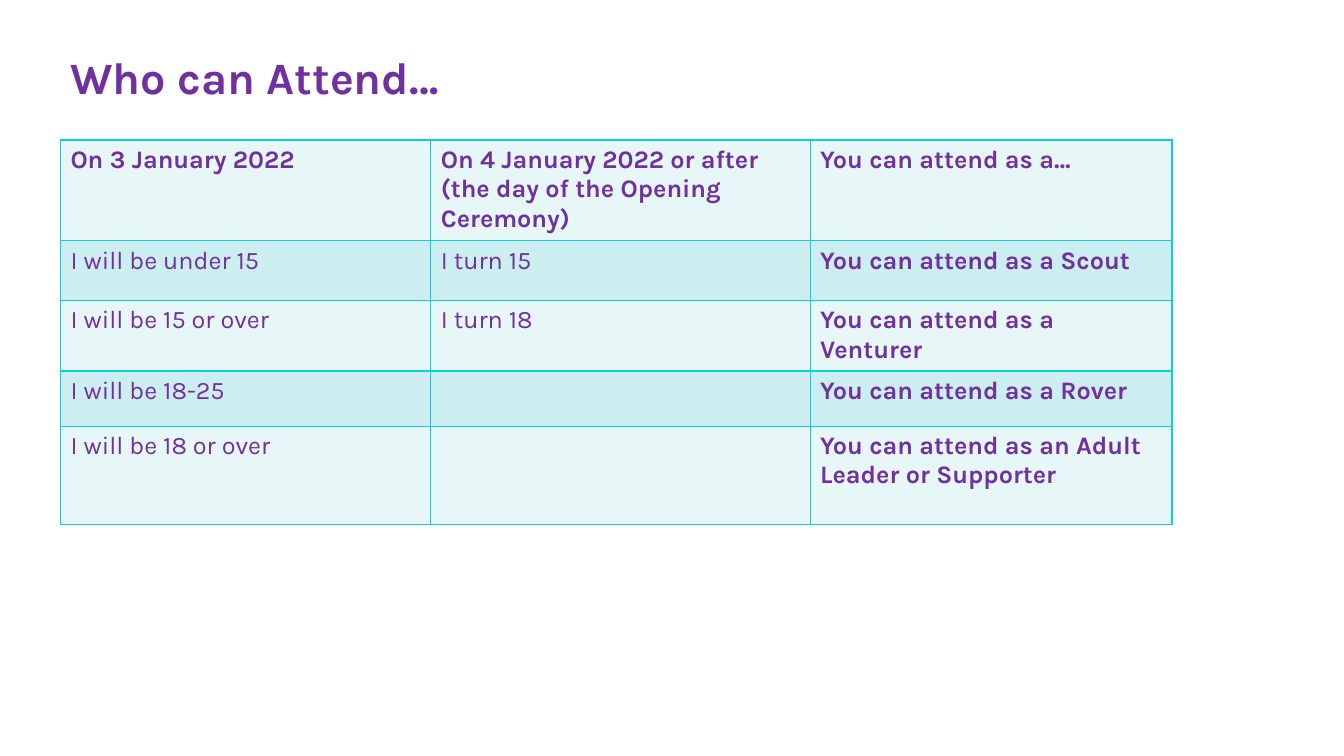
from pptx import Presentation
from pptx.dml.color import RGBColor
from pptx.enum.text import MSO_ANCHOR, MSO_AUTO_SIZE, PP_ALIGN
from pptx.oxml import parse_xml
from pptx.oxml.ns import nsdecls
from pptx.util import Pt

# Content
TITLE = "Who can Attend…"
ROWS = [
    ("On 3 January 2022",
     "On 4 January 2022 or after\n(the day of the Opening Ceremony)",
     "You can attend as a…"),
    ("I will be under 15", "I turn 15", "You can attend as a Scout"),
    ("I will be 15 or over", "I turn 18", "You can attend as a Venturer"),
    ("I will be 18-25", "", "You can attend as a Rover"),
    ("I will be 18 or over", "", "You can attend as an Adult Leader or Supporter"),
]

# Format, with lengths in points
PURPLE = RGBColor(0x70, 0x30, 0xA0)
PALE = RGBColor(0xE7, 0xF7, 0xF8)
AQUA = RGBColor(0xCC, 0xEE, 0xF1)
BORDER = RGBColor(0x0B, 0xD0, 0xD9)
LEFT = 43.2
TABLE_TOP = 100
COLUMN_WIDTHS = [264.5, 271, 258.5]
ROW_HEIGHTS = [70, 42.5, 44, 39.5, 70]


def format_font(font, size, bold):
    values = {"name": "Karla", "size": Pt(size), "bold": bold}
    for name, value in values.items():
        setattr(font, name, value)
    font.color.rgb = PURPLE


def add_borders(cell):
    properties = cell._tc.get_or_add_tcPr()
    for position, side in enumerate(("lnL", "lnR", "lnT", "lnB")):
        line = parse_xml(
            f'<a:{side} {nsdecls("a")} w="{Pt(1)}"><a:solidFill>'
            f'<a:srgbClr val="{BORDER}"/></a:solidFill></a:{side}>')
        properties.insert(position, line)


presentation = Presentation()
presentation.slide_width, presentation.slide_height = Pt(960), Pt(540)
slide = presentation.slides.add_slide(presentation.slide_layouts[5])

# Title
title = slide.shapes.title
title_box = {"left": LEFT, "top": 31.7, "width": 481.7, "height": 46}
for name, value in title_box.items():
    setattr(title, name, Pt(value))
frame = title.text_frame
frame.text = TITLE
frame_format = {"word_wrap": True, "vertical_anchor": MSO_ANCHOR.TOP,
                "auto_size": MSO_AUTO_SIZE.SHAPE_TO_FIT_TEXT}
for name, value in frame_format.items():
    setattr(frame, name, value)
frame.paragraphs[0].alignment = PP_ALIGN.LEFT
format_font(frame.paragraphs[0].font, 32, True)

# Attendance table
table = slide.shapes.add_table(
    len(ROWS), len(COLUMN_WIDTHS), Pt(LEFT), Pt(TABLE_TOP),
    Pt(sum(COLUMN_WIDTHS)), Pt(sum(ROW_HEIGHTS))).table
for column, width in zip(table.columns, COLUMN_WIDTHS):
    column.width = Pt(width)
for row, height in zip(table.rows, ROW_HEIGHTS):
    row.height = Pt(height)

# Header and last column are bold; row fills alternate
for row_index, texts in enumerate(ROWS):
    for column_index, text in enumerate(texts):
        cell = table.cell(row_index, column_index)
        cell.text = text
        cell.fill.solid()
        cell.fill.fore_color.rgb = AQUA if row_index % 2 else PALE
        add_borders(cell)
        bold = row_index == 0 or column_index == len(texts) - 1
        for paragraph in cell.text_frame.paragraphs:
            format_font(paragraph.font, 18, bold)

presentation.save("out.pptx")
